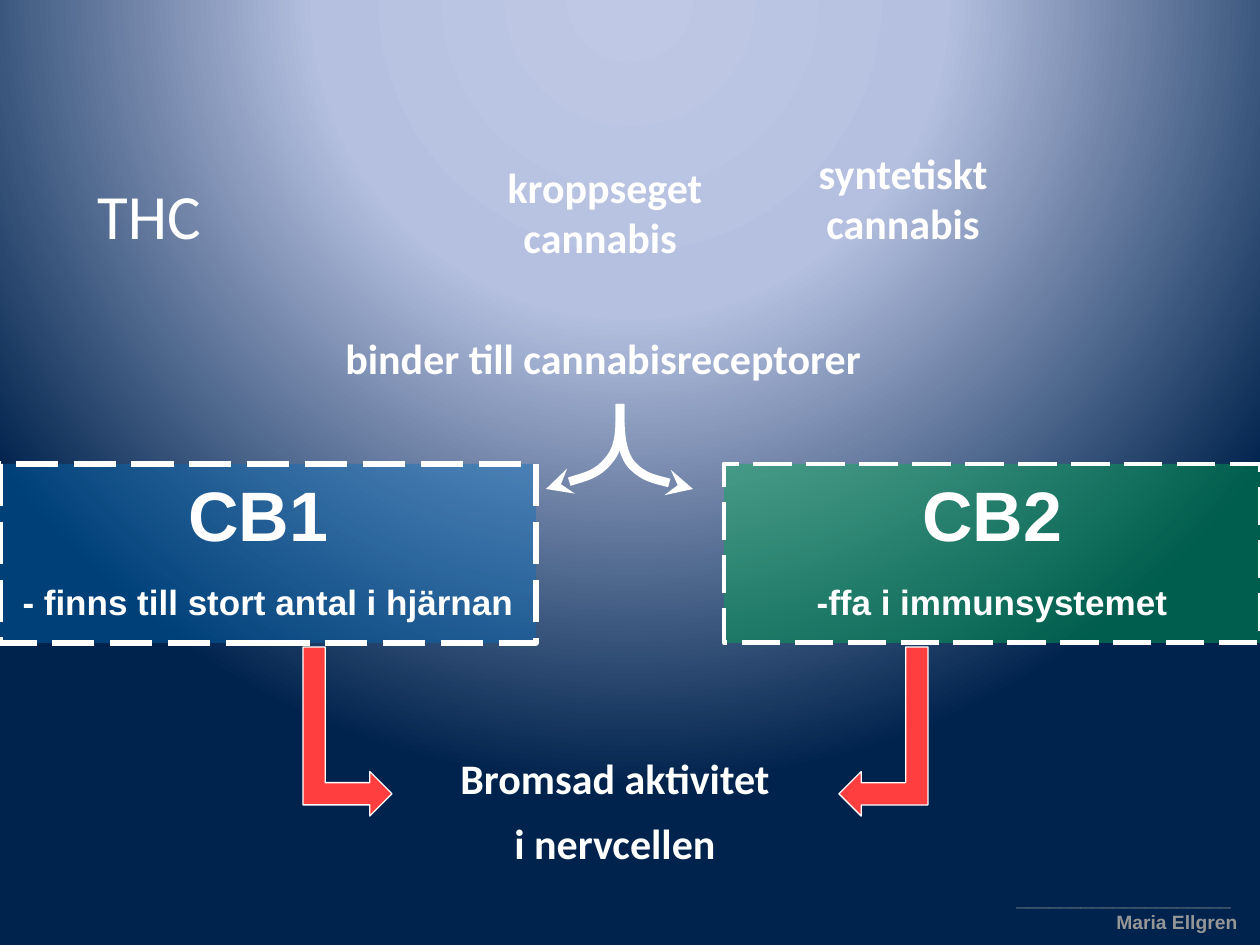
from lxml.etree import SubElement as Sub
from pptx import Presentation
from pptx.dml.color import RGBColor
from pptx.enum.dml import MSO_LINE_DASH_STYLE as Dash
from pptx.enum.shapes import MSO_SHAPE as Kind
from pptx.enum.text import MSO_ANCHOR as Anchor, PP_ALIGN as Align
from pptx.oxml.ns import qn
from pptx.util import Pt

SCALE = 914400 / 126
HEX = {"white": "FFFFFF", "grey": "969696", "red": "FF3F3F",
       "blue": "0070C0", "green": "00B050",
       "glow": "BFC9E5", "haze": "B5C0E0", "navy": "00234D"}


def px(n):
    return round(n * SCALE)


def rgb(name):
    return RGBColor.from_string(HEX[name])


class Deck:
    def __init__(self, wide, high):
        self.prs = Presentation()
        self.prs.slide_width, self.prs.slide_height = px(wide), px(high)
        self.slide = self.prs.slides.add_slide(self.prs.slide_layouts[6])
        self.shapes = self.slide.shapes

    def glow(self, stops, rect):
        """Radial background: stops are (percent, colour)."""
        self.slide.background.fill.gradient()
        grad = next(self.slide._element.iter(qn("a:gradFill")))
        for kid in list(grad):
            grad.remove(kid)
        group = Sub(grad, qn("a:gsLst"))
        for pos, name in stops:
            stop = Sub(group, qn("a:gs"), pos=str(pos * 1000))
            Sub(stop, qn("a:srgbClr"), val=HEX[name])
        ring = Sub(grad, qn("a:path"), {"path": "circle"})
        Sub(ring, qn("a:fillToRect"),
            {side: str(n * 1000) for side, n in zip("ltrb", rect)})

    def paint(self, shape, fill, line, width, alpha=None):
        shape.shadow.inherit = False
        if fill:
            shape.fill.solid()
            shape.fill.fore_color.rgb = rgb(fill)
        else:
            shape.fill.background()
        if alpha:
            tint = next(shape._element.spPr.iter(qn("a:srgbClr")))
            Sub(tint, qn("a:alpha"), val=str(alpha * 1000))
        shape.line.color.rgb = rgb(line)
        shape.line.width = Pt(width)

    def label(self, frame, rows, size, font="Calibri", color="white",
              bold=True, align=Align.CENTER, space=None, gap=(0, 0)):
        """Each row is a text, or a (text, size, align) tuple."""
        for i, row in enumerate(rows):
            text, pts, side = row if isinstance(row, tuple) else (row, size, align)
            para = frame.paragraphs[0] if i == 0 else frame.add_paragraph()
            para.alignment = side
            para.line_spacing = space
            para.space_before, para.space_after = map(Pt, gap)
            run = para.add_run()
            run.text = text
            run.font.name, run.font.size, run.font.bold = font, Pt(pts), bold
            run.font.color.rgb = rgb(color)

    def text(self, box, rows, size=24, wrap=True, **style):
        frame = self.shapes.add_textbox(*map(px, box)).text_frame
        frame.word_wrap = wrap
        self.label(frame, rows, size, **style)

    def panel(self, box, fill, alpha, width, rows, gap):
        shape = self.shapes.add_shape(Kind.RECTANGLE, *map(px, box))
        self.paint(shape, fill, "white", width, alpha)
        shape.line.dash_style = Dash.LONG_DASH
        frame = shape.text_frame
        frame.word_wrap = True
        frame.vertical_anchor = Anchor.TOP
        frame.margin_top = px(20)
        self.label(frame, rows, 20, font="Arial", space=0.85, gap=gap)

    def curve(self, start, points):
        """Bezier arrow: every three points make one cubic segment."""
        pen = self.shapes.build_freeform(*start, scale=SCALE)
        pen.add_line_segments(points, close=False)
        shape = pen.convert_to_shape()
        self.paint(shape, None, "white", 5)
        legs = list(shape._element.iter(qn("a:lnTo")))
        for i in range(0, len(legs), 3):
            legs[i].tag = qn("a:cubicBezTo")
            for leg in legs[i + 1:i + 3]:
                legs[i].append(leg[0])
                leg.getparent().remove(leg)
        edge = shape._element.spPr.find(qn("a:ln"))
        Sub(edge, qn("a:tailEnd"), type="stealth")

    def bent(self, box, flip=False):
        shape = self.shapes.add_shape(Kind.BENT_UP_ARROW, *map(px, box))
        self.paint(shape, "red", "white", 0.75)
        shape.rotation = 90
        if flip:
            shape._element.spPr.xfrm.set("flipV", "1")


def main():
    deck = Deck(1260, 945)
    deck.glow([(0, "glow"), (40, "haze"), (100, "navy")], (50, -80, 50, 180))

    # Receptor panels
    deck.panel((0, 464, 536, 179), "blue", 38, 3,
               [("CB1 ", 40, Align.CENTER), "- finns till stort antal i hjärnan"],
               (12, 6))
    deck.panel((724, 464, 536, 179), "green", 42, 2.75,
               [("CB2", 40, Align.CENTER), "-ffa i immunsystemet"], (6, 12))

    # Three kinds of cannabis
    deck.text((0, 155, 312, 77), ["THC "], 36, bold=False, space=1.2)
    deck.text((491, 155, 228, 100), ["kroppseget cannabis "])
    deck.text((799, 141, 208, 110), ["syntetiskt cannabis"])

    # Binding, split to both receptors
    deck.text((333, 326, 547, 64), ["binder till cannabisreceptorer"],
              wrap=False, align=Align.LEFT)
    fork = (620, 404)
    deck.curve(fork, [(620, 426), (621, 446), (609, 460),
                      (597, 475), (571, 481), (546, 489)])
    deck.curve(fork, [(620, 427), (620, 450), (631, 464),
                      (644, 478), (669, 483), (693, 489)])

    # Effect on the nerve cell
    deck.text((441, 731, 348, 145), ["Bromsad aktivitet i nervcellen"],
              space=1.3, gap=(5, 5))
    deck.bent((263, 687, 169, 89))
    deck.bent((799, 687, 169, 89), flip=True)

    # Author
    deck.text((1004, 881, 246, 59),
              [("_" * 20, 11, Align.LEFT), "Maria Ellgren"], 11,
              font="Arial", color="grey", align=Align.RIGHT)

    deck.prs.save("out.pptx")


if __name__ == "__main__":
    main()
